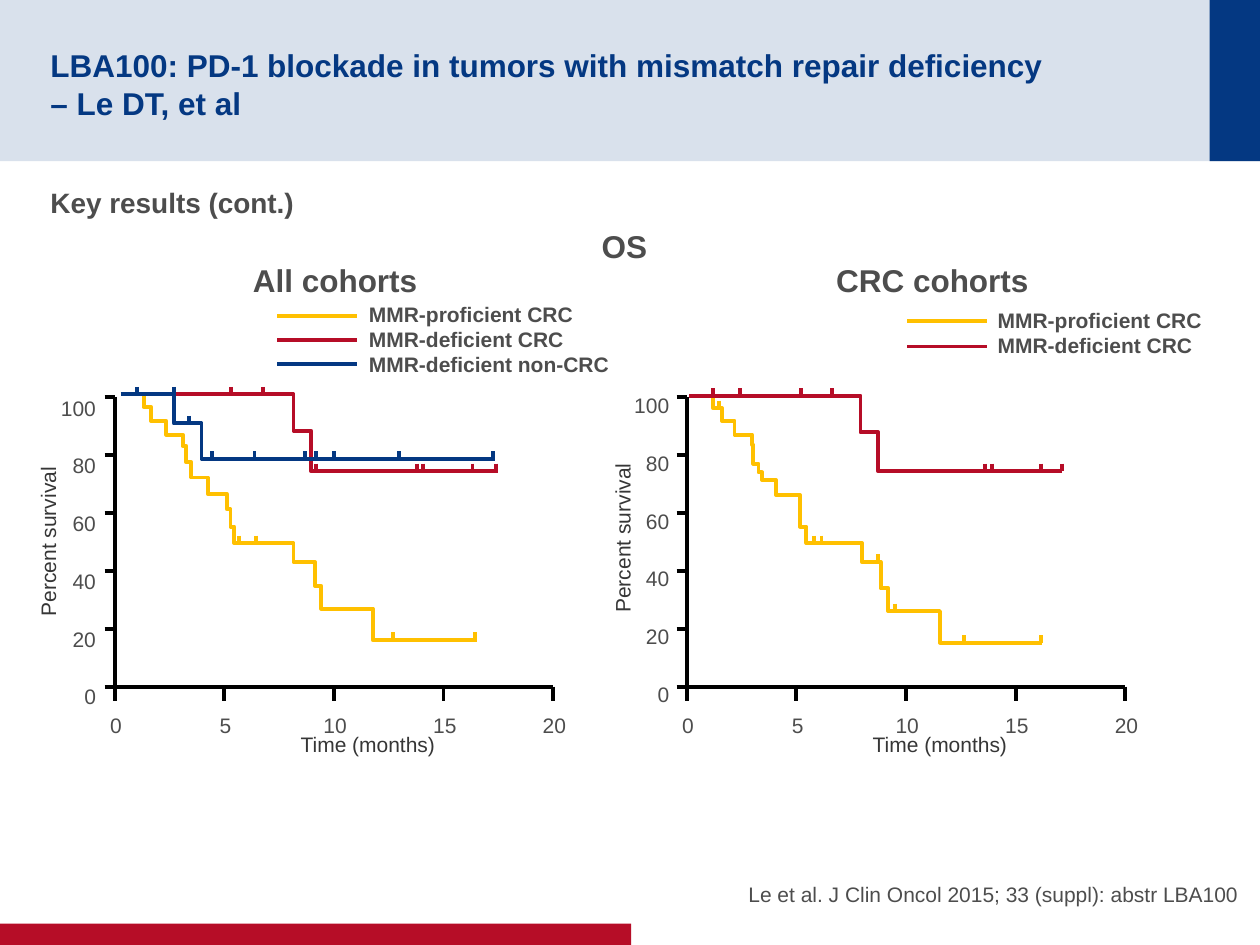
import pptx
import pptx.util
import pptx.dml.color
import pptx.enum.shapes
import pptx.enum.text
import pptx.oxml.ns
import pptx.oxml.xmlchemy

Inches = pptx.util.Inches
ALIGN = pptx.enum.text.PP_ALIGN
ANCHOR = pptx.enum.text.MSO_ANCHOR

THEME = {
    "font": "Arial", "head": 18, "sub": 16, "body": 12, "line": 2.25,
    "navy": "043882", "red": "B60D27", "yellow": "FFC000",
    "grey": "4D4D4D", "dark": "363636", "black": "000000",
}

TITLE = ["LBA100: PD-1 blockade in tumors with mismatch repair deficiency ", "– Le DT, et al"]
CITATION = "Le et al. J Clin Oncol 2015; 33 (suppl): abstr LBA100"
Y_LABELS = ["100", "80", "60", "40", "20", "0"]
X_LABELS = ["0", "5", "10", "15", "20"]

AXIS_TOP, AXIS_BOTTOM = 3.15, 5.45
X_STEP, Y_STEP = 0.87, 0.46
CENSOR_HEIGHT = 0.06

# A curve has a start point, (x, new level) drops, an end x and censoring marks.
PANELS = [
    {
        "title": "All cohorts", "title_box": (1.9, 2.02, 1.52, 0.4), "axis_x": 0.91,
        "y_labels": (0.38, 2.83, 0.48, 2.85), "y_title": (-0.32, 4.15, 1.4, 0.3),
        "legend_box": (2.83, 2.34, 2.13, 0.71), "key_x": 2.2, "key_y": 2.51, "key_step": 0.19,
        "curves": [
            {"name": "MMR-proficient CRC", "color": "yellow", "start": (0.96, 3.13), "end": 3.79,
             "drops": [(1.14, 3.23), (1.2, 3.34), (1.32, 3.45), (1.45, 3.54), (1.48, 3.67),
                       (1.52, 3.79), (1.65, 3.92), (1.8, 4.04), (1.83, 4.18), (1.86, 4.31),
                       (2.33, 4.46), (2.5, 4.65), (2.55, 4.83), (2.96, 5.08)],
             "censored": [1.9, 2.03, 3.12, 3.77]},
            {"name": "MMR-deficient CRC", "color": "red", "start": (0.96, 3.13), "end": 3.95,
             "drops": [(2.33, 3.42), (2.47, 3.74)],
             "censored": [1.83, 2.09, 2.51, 3.31, 3.36, 3.75, 3.94]},
            {"name": "MMR-deficient non-CRC", "color": "navy", "start": (0.96, 3.13), "end": 3.93,
             "drops": [(1.38, 3.36), (1.6, 3.64)],
             "censored": [1.09, 1.38, 1.5, 1.68, 2.02, 2.42, 2.51, 2.65, 3.17, 3.91]},
        ],
    },
    {
        "title": "CRC cohorts", "title_box": (6.53, 2.02, 1.74, 0.4), "axis_x": 5.45,
        "y_labels": (4.93, 2.81, 0.48, 2.85), "y_title": (4.24, 4.12, 1.4, 0.3),
        "legend_box": (7.82, 2.39, 1.84, 0.5), "key_x": 7.2, "key_y": 2.55, "key_step": 0.2,
        "curves": [
            {"name": "MMR-proficient CRC", "color": "yellow", "start": (5.47, 3.14), "end": 8.27,
             "drops": [(5.66, 3.24), (5.73, 3.34), (5.83, 3.45), (5.97, 3.53), (5.98, 3.68),
                       (6.02, 3.75), (6.05, 3.81), (6.16, 3.93), (6.35, 4.18), (6.4, 4.31),
                       (6.84, 4.46), (6.99, 4.67), (7.05, 4.85), (7.46, 5.1)],
             "censored": [5.71, 6.46, 6.52, 6.97, 7.1, 7.65, 8.26]},
            {"name": "MMR-deficient CRC", "color": "red", "start": (5.47, 3.14), "end": 8.43,
             "drops": [(6.83, 3.43), (6.97, 3.74)],
             "censored": [5.66, 5.87, 6.36, 6.6, 7.82, 7.87, 8.26, 8.43]},
        ],
    },
]


def color(name):
    return pptx.dml.color.RGBColor.from_string(THEME[name])


def add_bar(slide, box, name, opacity=None):
    sp = slide.shapes.add_shape(pptx.enum.shapes.MSO_SHAPE.RECTANGLE, *map(Inches, box))
    sp.shadow.inherit = False
    sp.fill.solid()
    sp.fill.fore_color.rgb = color(name)
    sp.line.fill.background()
    if opacity is not None:
        clr = sp._element.spPr.find(".//" + pptx.oxml.ns.qn("a:srgbClr"))
        alpha = pptx.oxml.xmlchemy.OxmlElement("a:alpha")
        alpha.set("val", str(opacity * 1000))
        clr.append(alpha)


def add_text(slide, box, paragraphs, size="body", ink="grey", bold=False, align=ALIGN.LEFT,
             wrap=False, anchor=ANCHOR.TOP, insets=(0.1, 0.05, 0.1, 0.05), spacing=None, after=None):
    """Each paragraph is a list of lines, parted by line breaks."""
    sp = slide.shapes.add_textbox(*map(Inches, box))
    tf = sp.text_frame
    tf.word_wrap = wrap
    tf.vertical_anchor = anchor
    tf.margin_left, tf.margin_top, tf.margin_right, tf.margin_bottom = map(Inches, insets)
    for i, lines in enumerate(paragraphs):
        p = tf.add_paragraph() if i else tf.paragraphs[0]
        p.alignment = align
        if spacing:
            p.line_spacing = spacing
        if after:
            p.space_after = pptx.util.Pt(after)
        for j, line in enumerate(lines):
            if j:
                p.add_line_break()
            r = p.add_run()
            r.text = line
            r.font.name = THEME["font"]
            r.font.size = pptx.util.Pt(THEME[size])
            r.font.bold = bold
            r.font.color.rgb = color(ink)
    return sp


def add_line(slide, x1, y1, x2, y2, name):
    cx = slide.shapes.add_connector(
        pptx.enum.shapes.MSO_CONNECTOR.STRAIGHT, *map(Inches, (x1, y1, x2, y2)))
    cx.line.color.rgb = color(name)
    cx.line.width = pptx.util.Pt(THEME["line"])
    cx._element.spPr.append(pptx.oxml.xmlchemy.OxmlElement("a:effectLst"))


def add_polyline(slide, points, name):
    start, *rest = [(Inches(x), Inches(y)) for x, y in points]
    builder = slide.shapes.build_freeform(*start)
    builder.add_line_segments(rest, close=False)
    sp = builder.convert_to_shape()
    sp.shadow.inherit = False
    sp.fill.background()
    sp.line.color.rgb = color(name)
    sp.line.width = pptx.util.Pt(THEME["line"])


def add_curve(slide, curve):
    points = [curve["start"]]
    for x, level in curve["drops"]:
        points += [(x, points[-1][1]), (x, level)]
    points.append((curve["end"], points[-1][1]))
    for mark in curve["censored"]:
        level = [y for x, y in [curve["start"]] + curve["drops"] if x < mark][-1]
        add_line(slide, mark, level - CENSOR_HEIGHT, mark, level, curve["color"])
    add_polyline(slide, points, curve["color"])


def add_axes(slide, panel):
    x0 = panel["axis_x"]
    add_polyline(slide, [(x0, AXIS_TOP), (x0, AXIS_BOTTOM), (x0 + 4 * X_STEP, AXIS_BOTTOM)], "black")
    for i in range(len(Y_LABELS)):
        y = AXIS_TOP + i * Y_STEP
        add_line(slide, x0 - 0.08, y, x0, y, "black")
    for i, label in enumerate(X_LABELS):
        x = x0 + i * X_STEP
        add_line(slide, x, AXIS_BOTTOM, x, AXIS_BOTTOM + 0.11, "black")
        width = 0.19 + 0.1 * len(label)
        add_text(slide, (x + 0.01 - width / 2, 5.35, width, 0.48), [[label]],
                 align=ALIGN.CENTER, spacing=2.27)
    add_text(slide, panel["y_labels"], [[label] for label in Y_LABELS],
             align=ALIGN.RIGHT, spacing=2.29)
    sp = add_text(slide, panel["y_title"], [["Percent survival"]], ink="dark", align=ALIGN.CENTER)
    sp.rotation = 270
    add_text(slide, (x0 + 1.37, 5.76, 1.28, 0.3), [["Time (months)"]], ink="dark", align=ALIGN.CENTER)


def add_legend(slide, panel):
    add_text(slide, panel["legend_box"], [[c["name"]] for c in panel["curves"]], bold=True)
    for i, curve in enumerate(panel["curves"]):
        y = panel["key_y"] + i * panel["key_step"]
        add_line(slide, panel["key_x"], y, panel["key_x"] + 0.63, y, curve["color"])


def main():
    prs = pptx.Presentation()
    prs.slide_width, prs.slide_height = Inches(10), Inches(7.5)
    s = prs.slides.add_slide(prs.slide_layouts[6])
    add_bar(s, (0, 0, 10, 1.28), "navy", opacity=15)
    add_bar(s, (9.6, 0, 0.4, 1.28), "navy")
    add_bar(s, (0, 7.33, 5.01, 0.17), "red")
    add_text(s, (0.4, 0.2, 9.01, 0.88), [TITLE], "head", "navy", True, wrap=True,
             anchor=ANCHOR.MIDDLE, insets=(0, 0.05, 0, 0))
    add_text(s, (0.4, 1.42, 9.19, 3.87), [["Key results (cont.)"]], "sub", bold=True, wrap=True,
             insets=(0, 0.05, 0.1, 0.05))
    add_text(s, (5.08, 6.67, 4.75, 0.53), [[CITATION]], align=ALIGN.RIGHT, wrap=True,
             anchor=ANCHOR.BOTTOM, insets=(0, 0, 0, 0), after=4)
    add_text(s, (4.67, 1.75, 0.57, 0.4), [["OS"]], "head", bold=True, align=ALIGN.CENTER)
    for panel in PANELS:
        add_text(s, panel["title_box"], [[panel["title"]]], "head", bold=True, align=ALIGN.CENTER)
        add_axes(s, panel)
        add_legend(s, panel)
        for curve in panel["curves"]:
            add_curve(s, curve)
    prs.save("out.pptx")


if __name__ == "__main__":
    main()
